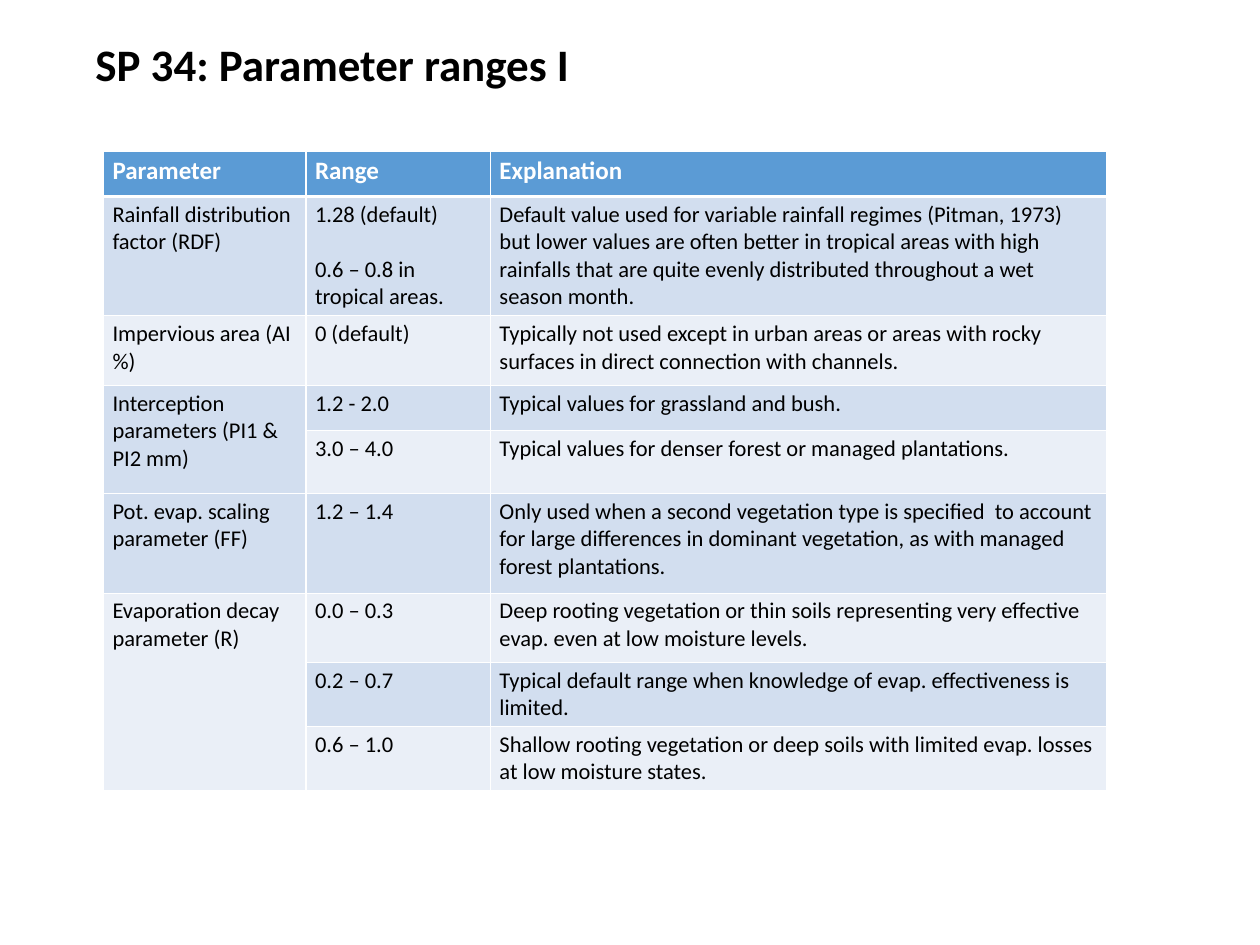
import pptx
import pptx.dml.color
import pptx.enum.text
import pptx.oxml
import pptx.oxml.ns
import pptx.util

SLIDE_WIDTH, SLIDE_HEIGHT = 14, 10.5
FONT = "Calibri"
COLOURS = {
    "text": "000000",
    "white": "FFFFFF",
    "header": "5B9BD5",
    "odd_row": "D2DEEF",
    "even_row": "EAEFF7",
}
TITLE_FORMAT = {"name": FONT, "size": pptx.util.Pt(36), "bold": True}
HEADER_FORMAT = {"name": FONT, "size": pptx.util.Pt(20), "bold": True}
BODY_FORMAT = {"name": FONT, "size": pptx.util.Pt(18), "bold": False}
PARAGRAPH_GAP = pptx.util.Pt(22)

COLUMN_WIDTHS = [2.25, 2.05, 6.84]
ROW_HEIGHTS = [0.5, 1.33, 0.77, 0.5, 0.7, 1.11, 0.77, 0.7, 0.7]
HEADINGS = ["Parameter", "Range", "Explanation"]

# Each parameter with its ranges and their explanations
PARAMETERS = [
    ("Rainfall distribution factor (RDF)", [
        ("1.28 (default)\n0.6 – 0.8 in tropical areas.",
         "Default value used for variable rainfall regimes (Pitman, 1973) but lower values "
         "are often better in tropical areas with high rainfalls that are quite evenly "
         "distributed throughout a wet season month."),
    ]),
    ("Impervious area (AI %)", [
        ("0 (default)",
         "Typically not used except in urban areas or areas with rocky surfaces in direct "
         "connection with channels."),
    ]),
    ("Interception parameters (PI1 & PI2 mm)", [
        ("1.2 - 2.0", "Typical values for grassland and bush."),
        ("3.0 – 4.0", "Typical values for denser forest or managed plantations."),
    ]),
    ("Pot. evap. scaling parameter (FF)", [
        ("1.2 – 1.4",
         "Only used when a second vegetation type is specified  to account for large "
         "differences in dominant vegetation, as with managed forest plantations."),
    ]),
    ("Evaporation decay parameter (R)", [
        ("0.0 – 0.3",
         "Deep rooting vegetation or thin soils representing very effective evap. even at "
         "low moisture levels."),
        ("0.2 – 0.7",
         "Typical default range when knowledge of evap. effectiveness is limited."),
        ("0.6 – 1.0",
         "Shallow rooting vegetation or deep soils with limited evap. losses at low "
         "moisture states."),
    ]),
]


def rgb(name):
    return pptx.dml.color.RGBColor.from_string(COLOURS[name])


def format_font(font, values, colour):
    for attribute, value in values.items():
        setattr(font, attribute, value)
    font.color.rgb = rgb(colour)


def add_title(slide, text):
    title = slide.shapes.title
    box = {"left": 0.96, "top": 0.38, "width": 12.07, "height": 0.72}
    for attribute, inches in box.items():
        setattr(title, attribute, pptx.util.Inches(inches))
    frame = title.text_frame
    frame.text = text
    frame.word_wrap = True
    frame.auto_size = pptx.enum.text.MSO_AUTO_SIZE.NONE
    frame.vertical_anchor = pptx.enum.text.MSO_ANCHOR.MIDDLE
    paragraph = frame.paragraphs[0]
    paragraph.alignment = pptx.enum.text.PP_ALIGN.LEFT
    paragraph.line_spacing = 0.9
    format_font(paragraph.runs[0].font, TITLE_FORMAT, "text")


def set_borders(cell, top, bottom):
    """Draw white cell borders; top and bottom are widths in points."""
    properties = cell._tc.get_or_add_tcPr()
    widths = {"lnL": 1, "lnR": 1, "lnT": top, "lnB": bottom}
    for position, (side, width) in enumerate(widths.items()):
        line = pptx.oxml.parse_xml(
            f'<a:{side} {pptx.oxml.ns.nsdecls("a")} w="{pptx.util.Pt(width)}">'
            f'<a:solidFill><a:srgbClr val="{COLOURS["white"]}"/></a:solidFill></a:{side}>'
        )
        properties.insert(position, line)


def style_cell(cell, row):
    if row == 0:
        fill, colour, values = "header", "white", HEADER_FORMAT
    else:
        fill = "odd_row" if row % 2 else "even_row"
        colour, values = "text", BODY_FORMAT
    cell.fill.solid()
    cell.fill.fore_color.rgb = rgb(fill)
    set_borders(cell, top=3 if row == 1 else 1, bottom=3 if row == 0 else 1)
    for index, paragraph in enumerate(cell.text_frame.paragraphs):
        if index:
            paragraph.space_before = PARAGRAPH_GAP
        format_font(paragraph.font, values, colour)
        for run in paragraph.runs:
            format_font(run.font, values, colour)


def fill_table(table):
    for column, heading in enumerate(HEADINGS):
        table.cell(0, column).text = heading
    row = 1
    for parameter, ranges in PARAMETERS:
        table.cell(row, 0).text = parameter
        if len(ranges) > 1:
            table.cell(row, 0).merge(table.cell(row + len(ranges) - 1, 0))
        for value, explanation in ranges:
            table.cell(row, 1).text = value
            table.cell(row, 2).text = explanation
            row += 1


def add_parameter_table(slide):
    bounds = [1.15, 1.68, sum(COLUMN_WIDTHS), sum(ROW_HEIGHTS)]
    table = slide.shapes.add_table(
        len(ROW_HEIGHTS), len(COLUMN_WIDTHS), *map(pptx.util.Inches, bounds)
    ).table
    for column, width in zip(table.columns, COLUMN_WIDTHS):
        column.width = pptx.util.Inches(width)
    for row, height in zip(table.rows, ROW_HEIGHTS):
        row.height = pptx.util.Inches(height)
    fill_table(table)
    for index, row in enumerate(table.rows):
        for cell in row.cells:
            style_cell(cell, index)


def main():
    presentation = pptx.Presentation()
    presentation.slide_width = pptx.util.Inches(SLIDE_WIDTH)
    presentation.slide_height = pptx.util.Inches(SLIDE_HEIGHT)
    title_only = presentation.slide_layouts[5]
    slide = presentation.slides.add_slide(title_only)
    add_title(slide, "SP 34: Parameter ranges I")
    add_parameter_table(slide)
    presentation.save("out.pptx")


if __name__ == "__main__":
    main()
